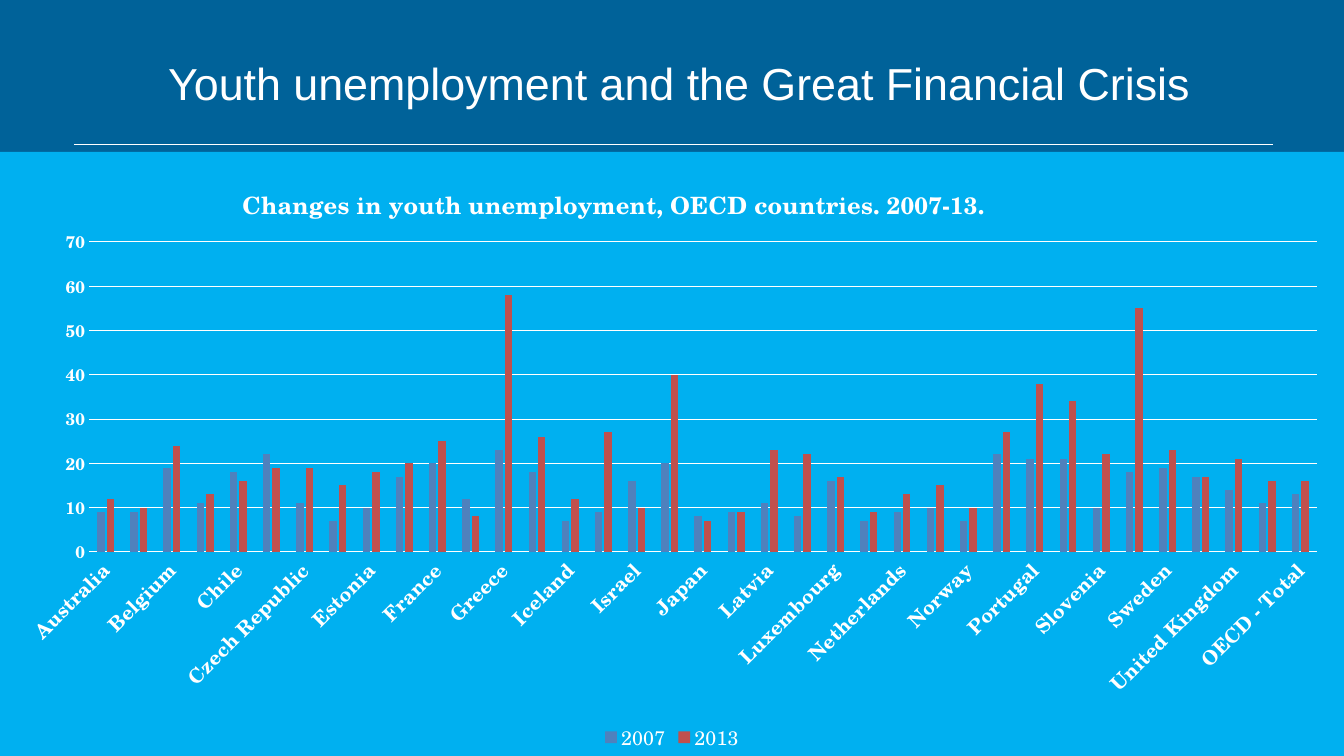
from dataclasses import dataclass

import lxml.etree
import pptx
import pptx.chart.data
import pptx.dml.color
import pptx.enum.chart
import pptx.enum.shapes
import pptx.enum.text
import pptx.oxml
import pptx.oxml.ns
import pptx.util

RGBColor = pptx.dml.color.RGBColor
WHITE = RGBColor(0xFF, 0xFF, 0xFF)
NAVY = RGBColor(0x00, 0x62, 0x99)
SKY = RGBColor(0x00, 0xB0, 0xF0)
BLUE = RGBColor(0x4F, 0x81, 0xBD)
RED = RGBColor(0xC0, 0x50, 0x4D)

EMU_PER_PX = 914400 / 100.8
HEADING_FONT = "Arial"
CHART_FONT = "TeX Gyre Schola"
CHART_WIDTH, CHART_HEIGHT = 1344, 604

COUNTRIES = [
    "Australia", "Austria", "Belgium", "Canada", "Chile", "Colombia", "Czech Republic",
    "Denmark", "Estonia", "Finland", "France", "Germany", "Greece", "Hungary", "Iceland",
    "Ireland", "Israel", "Italy", "Japan", "Korea", "Latvia", "Lithuania", "Luxembourg",
    "Mexico", "Netherlands", "New Zealand", "Norway", "Poland", "Portugal",
    "Slovak Republic", "Slovenia", "Spain", "Sweden", "Turkey", "United Kingdom",
    "United States", "OECD - Total",
]


@dataclass
class YearRates:
    year: str
    color: RGBColor
    rates: list[int]


YEARS = [
    YearRates("2007", BLUE, [
        9, 9, 19, 11, 18, 22, 11, 7, 10, 17, 20, 12, 23, 18, 7, 9, 16, 20, 8, 9, 11, 8, 16,
        7, 9, 10, 7, 22, 21, 21, 10, 18, 19, 17, 14, 11, 13]),
    YearRates("2013", RED, [
        12, 10, 24, 13, 16, 19, 19, 15, 18, 20, 25, 8, 58, 26, 12, 27, 10, 40, 7, 9, 23, 22,
        17, 9, 13, 15, 10, 27, 38, 34, 22, 55, 23, 17, 21, 16, 16]),
]


def px(length: int) -> int:
    return round(length * EMU_PER_PX)


def style_font(font, size: int, bold: bool = False, name: str = CHART_FONT) -> None:
    font.size = pptx.util.Pt(size)
    font.bold = bold
    font.name = name
    font.color.rgb = WHITE


def style_line(line, width: float) -> None:
    line.color.rgb = WHITE
    line.width = pptx.util.Pt(width)


def add_element(parent, tag: str, **attributes: str):
    return lxml.etree.SubElement(parent, pptx.oxml.ns.qn(tag), attributes)


def place_part(part, index: int, left: int, top: int, width: int = 0, height: int = 0) -> None:
    """Fix a chart part at a position in px within the chart."""
    for old in part.findall(pptx.oxml.ns.qn("c:layout")):
        part.remove(old)
    layout = add_element(part, "c:layout")
    part.insert(index, layout)
    manual = add_element(layout, "c:manualLayout")
    if width:
        add_element(manual, "c:layoutTarget", val="inner")
    add_element(manual, "c:xMode", val="edge")
    add_element(manual, "c:yMode", val="edge")
    sizes = {"x": left / CHART_WIDTH, "y": top / CHART_HEIGHT}
    if width:
        sizes |= {"w": width / CHART_WIDTH, "h": height / CHART_HEIGHT}
    for side, share in sizes.items():
        add_element(manual, f"c:{side}", val=f"{share:.4f}")


def add_heading(slide) -> None:
    heading = slide.shapes.title
    heading.left, heading.top, heading.width, heading.height = map(px, (158, 26, 1090, 113))
    frame = heading.text_frame
    frame.vertical_anchor = pptx.enum.text.MSO_ANCHOR.MIDDLE
    paragraph = frame.paragraphs[0]
    paragraph.alignment = pptx.enum.text.PP_ALIGN.LEFT
    run = paragraph.add_run()
    run.text = "Youth unemployment and the Great Financial Crisis"
    style_font(run.font, 32, name=HEADING_FONT)


def add_rule(slide) -> None:
    rule = slide.shapes.add_connector(
        pptx.enum.shapes.MSO_CONNECTOR.STRAIGHT, px(74), px(144), px(1273), px(144))
    style_line(rule.line, 0.5)
    add_element(rule.element.spPr, "a:effectLst")


def add_unemployment_chart(slide) -> None:
    rates_data = pptx.chart.data.CategoryChartData(number_format="0")
    rates_data.categories = COUNTRIES
    for entry in YEARS:
        rates_data.add_series(entry.year, entry.rates)
    chart = slide.shapes.add_chart(
        pptx.enum.chart.XL_CHART_TYPE.COLUMN_CLUSTERED,
        px(0), px(152), px(CHART_WIDTH), px(CHART_HEIGHT), rates_data).chart
    style_font(chart.font, 10)

    # Sky background
    background = pptx.oxml.parse_xml(
        f'<c:spPr {pptx.oxml.ns.nsdecls("c", "a")}><a:solidFill><a:srgbClr val="{SKY}"/>'
        "</a:solidFill><a:ln><a:noFill/></a:ln></c:spPr>")
    chart.element.find(pptx.oxml.ns.qn("c:txPr")).addprevious(background)

    # Chart title
    chart.has_title = True
    run = chart.chart_title.text_frame.paragraphs[0].add_run()
    run.text = "Changes in youth unemployment, OECD countries. 2007-13."
    style_font(run.font, 17, bold=True)
    chart.chart_title.include_in_layout = False
    place_part(chart.element.xpath("c:chart/c:title")[0], 1, 238, 27)

    # Columns
    plot = chart.plots[0]
    plot.gap_width = 219
    plot.overlap = -27
    plot.vary_by_categories = False
    for series, entry in zip(plot.series, YEARS):
        series.format.fill.solid()
        series.format.fill.fore_color.rgb = entry.color
        series.invert_if_negative = False
    place_part(chart.element.xpath("c:chart/c:plotArea")[0], 0, 89, 90, 1228, 310)

    # Axes
    countries, rates = chart.category_axis, chart.value_axis
    for axis, size in ((countries, 14), (rates, 12)):
        axis.major_tick_mark = axis.minor_tick_mark = pptx.enum.chart.XL_TICK_MARK.NONE
        style_font(axis.tick_labels.font, size, bold=True)
    style_line(countries.format.line, 0.75)
    rates.format.line.fill.background()
    rates.minimum_scale, rates.maximum_scale, rates.major_unit = 0, 70, 10
    rates.has_major_gridlines = True
    style_line(rates.major_gridlines.format.line, 0.75)

    # Every second country named, at a slant
    country_axis = chart.element.xpath(".//c:catAx")[0]
    country_axis.xpath("c:txPr/a:bodyPr")[0].set("rot", "-2700000")
    skip = add_element(country_axis, "c:tickLblSkip", val="2")
    country_axis.find(pptx.oxml.ns.qn("c:noMultiLvlLbl")).addprevious(skip)

    # Legend
    chart.has_legend = True
    chart.legend.position = pptx.enum.chart.XL_LEGEND_POSITION.BOTTOM
    chart.legend.include_in_layout = False
    style_font(chart.legend.font, 14)


def main() -> None:
    deck = pptx.Presentation()
    deck.slide_width, deck.slide_height = px(1344), px(756)
    slide = deck.slides.add_slide(deck.slide_layouts[5])
    slide.background.fill.solid()
    slide.background.fill.fore_color.rgb = NAVY
    add_rule(slide)
    add_heading(slide)
    add_unemployment_chart(slide)
    deck.save("out.pptx")


if __name__ == "__main__":
    main()
